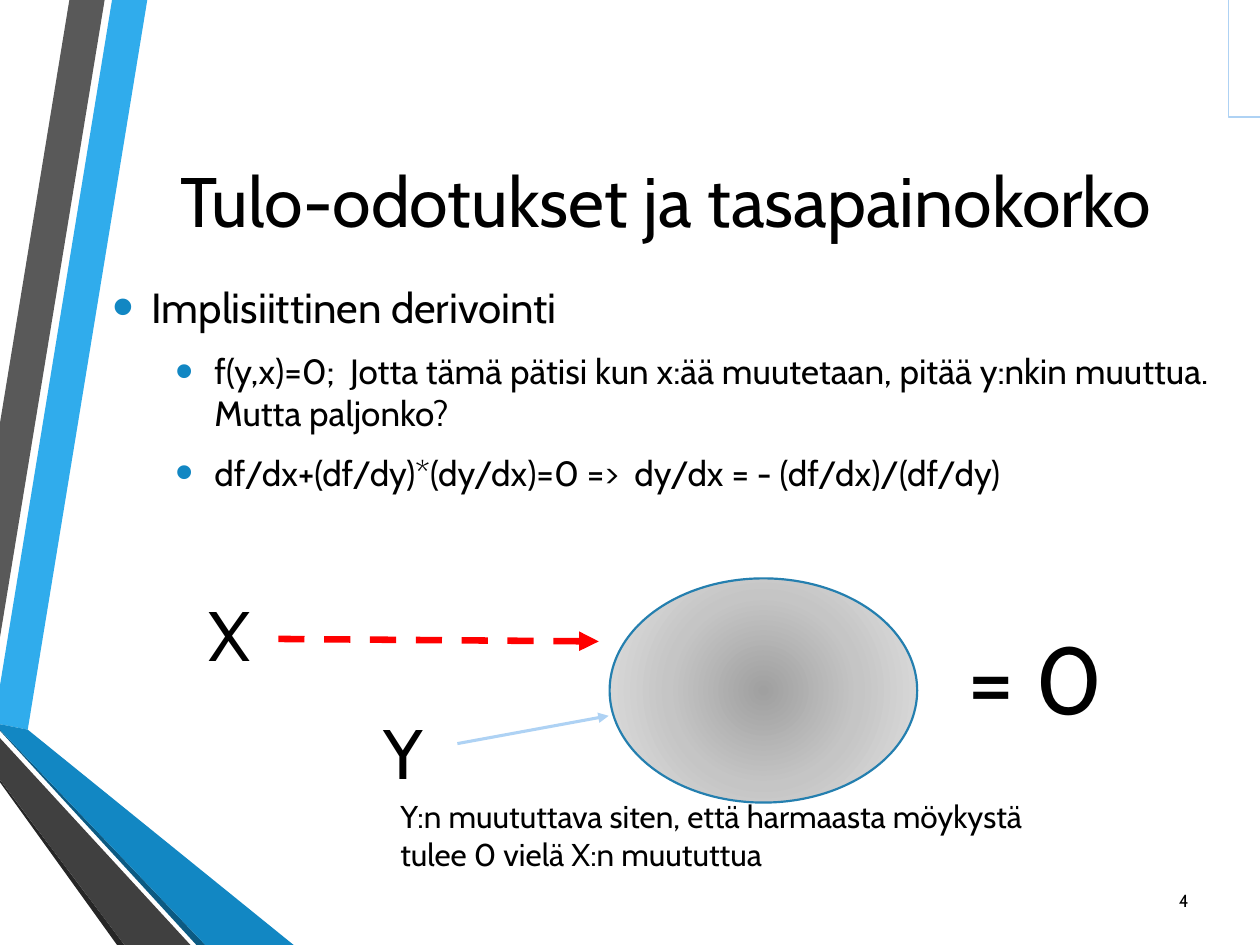
from lxml import etree
from pptx import Presentation
from pptx.dml.color import RGBColor
from pptx.enum import dml, shapes, text
from pptx.oxml import parse_xml
from pptx.oxml.ns import nsdecls, qn
from pptx.util import Cm, Pt

FONT = "Cabin"
BLACK = RGBColor(0x00, 0x00, 0x00)
SKY = RGBColor(0x30, 0xAC, 0xEC)
GREY = RGBColor(0x59, 0x59, 0x59)
NEAR_BLACK = RGBColor(0x26, 0x26, 0x26)
NAVY = RGBColor(0x0C, 0x5A, 0x82)
BLUE = RGBColor(0x12, 0x87, 0xC3)
CHARCOAL = RGBColor(0x40, 0x40, 0x40)
OUTLINE = RGBColor(0x24, 0x7F, 0xAF)
PALE_BLUE = RGBColor(0xAE, 0xD2, 0xF4)
RED = RGBColor(0xFF, 0x00, 0x00)
BLOB_STOPS = [(0, RGBColor(0xA0, 0xA0, 0xA0)),
              (50, RGBColor(0xC5, 0xC5, 0xC5)),
              (100, RGBColor(0xE3, 0xE3, 0xE3))]

# Corner points in centimetres
RIBBONS = [
    (SKY, [(0, 13.82), (0, 14.6), (0.56, 14.71), (2.97, 0), (2.26, 0)]),
    (GREY, [(2.11, 0), (1.4, 0), (0, 8.53), (0, 12.85)]),
    (NEAR_BLACK, [(0, 15.72), (0, 15.77), (2.36, 19.05), (2.51, 19.05)]),
    (NAVY, [(0, 14.71), (0, 14.73), (3.96, 19.05), (4.14, 19.05)]),
    (BLUE, [(0, 14.71), (4.14, 19.05), (5.92, 19.05), (0.56, 14.71), (0, 14.6)]),
    (CHARCOAL, [(0, 15.72), (2.51, 19.05), (3.84, 19.05), (0, 14.88)]),
]

# Level, size, text
BULLETS = [
    (0, 24, "Implisiittinen derivointi"),
    (1, 20, "f(y,x)=0;  Jotta tämä pätisi kun x:ää muutetaan, pitää y:nkin "
            "muuttua. Mutta paljonko?"),
    (1, 20, "df/dx+(df/dy)*(dy/dx)=0 =>  dy/dx = - (df/dx)/(df/dy)"),
]

# Left, top, width, height, size, text
LABELS = [
    (19.25, 12.37, 5.03, 2.57, 54, "= 0"),
    (3.96, 11.81, 1.4, 1.96, 40, "X"),
    (7.49, 14.17, 1.4, 1.96, 40, "Y"),
    (7.82, 15.95, 13.77, 1.8, 18,
     "Y:n muututtava siten, että harmaasta möykystä tulee 0 vielä X:n muututtua"),
]


def place(sp, left, top, width, height):
    sp.left, sp.top, sp.width, sp.height = map(Cm, (left, top, width, height))


def style_runs(p, size):
    for r in p.runs:
        r.font.name = FONT
        r.font.size = Pt(size)
        r.font.color.rgb = BLACK


def add_ribbons(s):
    """Draw the ribbons as one group behind everything else."""
    group = s.shapes.add_group_shape()
    for colour, points in RIBBONS:
        start, *rest = [(Cm(x), Cm(y)) for x, y in points]
        builder = group.shapes.build_freeform(*start)
        builder.add_line_segments(rest)
        sp = builder.convert_to_shape()
        sp.shadow.inherit = False
        sp.fill.solid()
        sp.fill.fore_color.rgb = colour
        sp.line.fill.background()
    s.shapes.element.insert(2, group.element)


def set_title(s):
    sp = s.shapes.title
    place(sp, 2.72, 1.27, 21.41, 5.51)
    tf = sp.text_frame
    tf.text = "Tulo-odotukset ja tasapainokorko"
    tf.auto_size = text.MSO_AUTO_SIZE.NONE
    tf.vertical_anchor = text.MSO_ANCHOR.MIDDLE
    p = tf.paragraphs[0]
    p.alignment = text.PP_ALIGN.CENTER
    style_runs(p, 40)


def add_bullet(p, level):
    pPr = p._p.get_or_add_pPr()
    pPr.set("marL", str(Cm(0.79 + 1.27 * level)))
    pPr.set("indent", str(Cm(-0.79)))
    colour = etree.SubElement(pPr, qn("a:buClr"))
    etree.SubElement(colour, qn("a:srgbClr"), val=str(BLUE))
    etree.SubElement(pPr, qn("a:buSzPct"), val="145000")
    etree.SubElement(pPr, qn("a:buFont"), typeface="Arial")
    etree.SubElement(pPr, qn("a:buChar"), char="•")


def set_body(s):
    sp = s.placeholders[1]
    place(sp, 2.01, 4.37, 22.86, 6.88)
    tf = sp.text_frame
    tf.text = "\n".join(content for _, _, content in BULLETS)
    tf.auto_size = text.MSO_AUTO_SIZE.NONE
    tf.vertical_anchor = text.MSO_ANCHOR.MIDDLE
    for p, (level, size, _) in zip(tf.paragraphs, BULLETS):
        p.level = level
        p.space_before = Pt(0.2 * size)
        p.space_after = Pt(6)
        add_bullet(p, level)
        style_runs(p, size)


def add_label(s, left, top, width, height, size, content):
    sp = s.shapes.add_textbox(*map(Cm, (left, top, width, height)))
    tf = sp.text_frame
    tf.text = content
    tf.word_wrap = True
    tf.auto_size = text.MSO_AUTO_SIZE.SHAPE_TO_FIT_TEXT
    style_runs(tf.paragraphs[0], size)
    return sp


def add_slide_number(s):
    tf = add_label(s, 18.29, 17.65, 5.92, 1.02, 10, "4").text_frame
    tf.auto_size = text.MSO_AUTO_SIZE.NONE
    tf.vertical_anchor = text.MSO_ANCHOR.MIDDLE
    tf.paragraphs[0].alignment = text.PP_ALIGN.RIGHT


def add_blob(s):
    """Add the ellipse with a gradient that spreads from its centre."""
    sp = s.shapes.add_shape(shapes.MSO_SHAPE.OVAL,
                            *map(Cm, (12.29, 11.66, 6.2, 4.52)))
    sp.shadow.inherit = False
    sp.line.color.rgb = OUTLINE
    sp.line.width = Pt(1.25)
    sp.fill.background()
    stops = "".join(f'<a:gs pos="{pos * 1000}"><a:srgbClr val="{colour}"/></a:gs>'
                    for pos, colour in BLOB_STOPS)
    gradient = parse_xml(
        f'<a:gradFill {nsdecls("a")} rotWithShape="1"><a:gsLst>{stops}</a:gsLst>'
        '<a:path path="circle"><a:fillToRect l="50000" t="50000" r="50000" '
        'b="50000"/></a:path></a:gradFill>')
    spPr = sp.element.spPr
    spPr.replace(spPr.find(qn("a:noFill")), gradient)


def add_arrow(s, start, end, colour, width, dash=None,
              kind=shapes.MSO_CONNECTOR.STRAIGHT):
    cx = s.shapes.add_connector(kind, *map(Cm, start + end))
    cx.line.color.rgb = colour
    cx.line.width = Pt(width)
    if dash:
        cx.line.dash_style = dash
    etree.SubElement(cx.line._get_or_add_ln(), qn("a:tailEnd"), type="triangle")
    etree.SubElement(cx.element.spPr, qn("a:effectLst"))


def main():
    prs = Presentation()
    prs.slide_width, prs.slide_height = Cm(25.4), Cm(19.05)
    s = prs.slides.add_slide(prs.slide_layouts[1])
    add_ribbons(s)
    set_title(s)
    set_body(s)
    add_slide_number(s)
    add_blob(s)
    for label in LABELS:
        add_label(s, *label)
    add_arrow(s, (9.22, 14.99), (12.27, 14.43), PALE_BLUE, 1.75)
    add_arrow(s, (5.61, 12.88), (12.07, 12.93), RED, 3.75,
              dash=dml.MSO_LINE.DASH)
    add_arrow(s, (23.5, -0.18), (26.04, 2.36), PALE_BLUE, 0.75,
              kind=shapes.MSO_CONNECTOR.ELBOW)
    prs.save("out.pptx")


if __name__ == "__main__":
    main()
